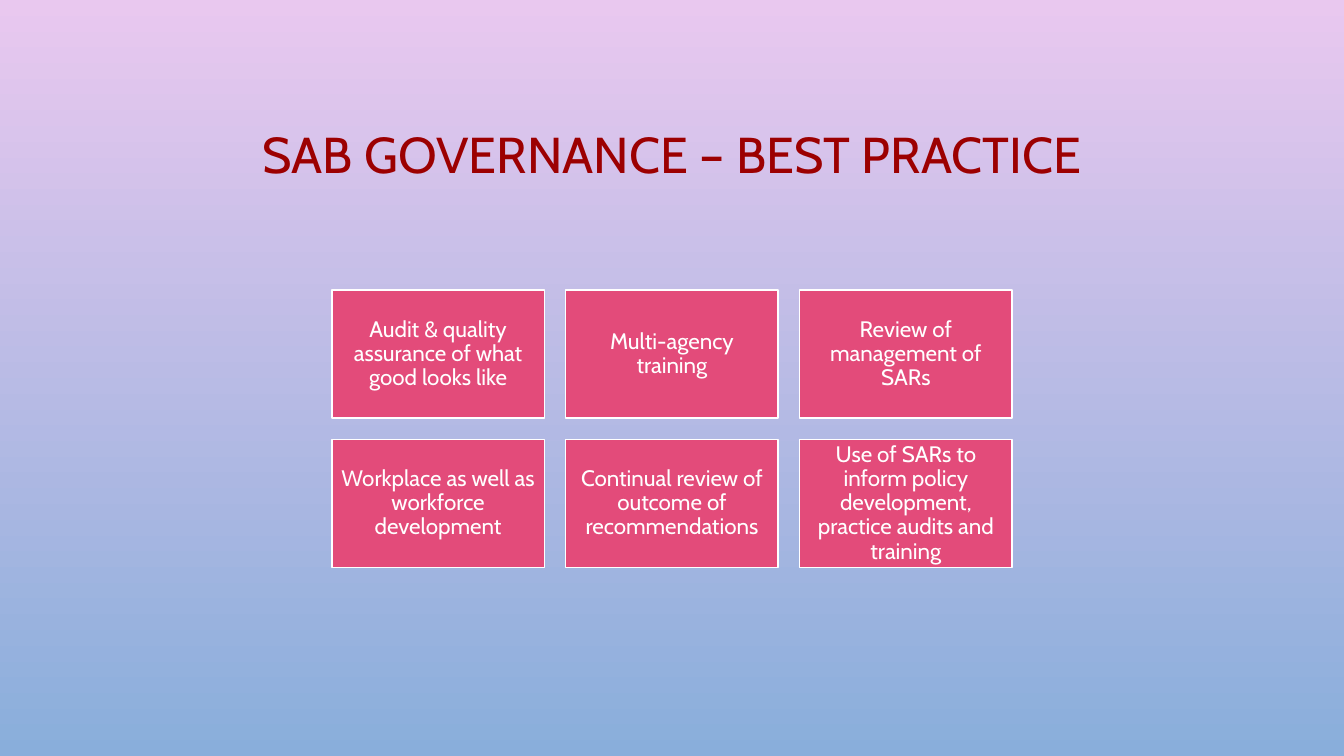
from pptx import Presentation
from pptx import util as u
from pptx.dml.color import RGBColor
from pptx.enum import shapes, text

COLOURS = {
    "sky_top": "E9C8EF",
    "sky_bottom": "89AEDB",
    "heading": "9C0001",
    "card": "E34B7A",
    "white": "FFFFFF",
}

PRACTICES = [
    "Audit & quality assurance of what good looks like",
    "Multi-agency training",
    "Review of management of SARs",
    "Workplace as well as workforce development",
    "Continual review of outcome of recommendations",
    "Use of SARs to inform policy development, practice audits and training",
]


class GovernanceSlide:
    font = "Cabin"
    columns = 3
    grid_left, grid_top = 3.29, 2.88
    card_width, card_height = 2.11, 1.27
    gap = 0.21

    def __init__(self, deck):
        self.slide = deck.slides.add_slide(deck.slide_layouts[5])

    def colour(self, name):
        return RGBColor.from_string(COLOURS[name])

    def background(self, top, bottom):
        fill = self.slide.background.fill
        fill.gradient()
        fill.gradient_angle = 270
        for stop, position, name in zip(fill.gradient_stops, (0, 1), (top, bottom)):
            stop.position = position
            stop.color.rgb = self.colour(name)

    def set_words(self, frame, words, size, colour, inset):
        frame.word_wrap = True
        frame.auto_size = text.MSO_AUTO_SIZE.NONE
        frame.vertical_anchor = text.MSO_ANCHOR.MIDDLE
        frame.margin_left = frame.margin_right = u.Inches(inset[0])
        frame.margin_top = frame.margin_bottom = u.Inches(inset[1])
        paragraph = frame.paragraphs[0]
        paragraph.alignment = text.PP_ALIGN.CENTER
        paragraph.line_spacing = 0.9
        run = paragraph.add_run()
        run.text = words
        run.font.name = self.font
        run.font.size = u.Pt(size)
        run.font.color.rgb = self.colour(colour)

    def title(self, words):
        heading = self.slide.shapes.title
        heading.left, heading.top = u.Inches(1), u.Inches(0.68)
        heading.width, heading.height = u.Inches(11.33), u.Inches(1.75)
        self.set_words(heading.text_frame, words, 36, "heading", (0.1, 0.05))

    def card(self, index, words):
        row, column = divmod(index, self.columns)
        card = self.slide.shapes.add_shape(
            shapes.MSO_SHAPE.RECTANGLE,
            u.Inches(self.grid_left + column * (self.card_width + self.gap)),
            u.Inches(self.grid_top + row * (self.card_height + self.gap)),
            u.Inches(self.card_width),
            u.Inches(self.card_height),
        )
        card.shadow.inherit = False
        card.fill.solid()
        card.fill.fore_color.rgb = self.colour("card")
        card.line.color.rgb = self.colour("white")
        card.line.width = u.Pt(1.25)
        self.set_words(card.text_frame, words, 16, "white", (0.07, 0.07))


def main():
    deck = Presentation()
    deck.slide_width, deck.slide_height = u.Inches(13.33), u.Inches(7.5)
    governance = GovernanceSlide(deck)

    # Background and heading
    governance.background("sky_top", "sky_bottom")
    governance.title("SAB GOVERNANCE – BEST PRACTICE")

    # Grid of practices
    for index, practice in enumerate(PRACTICES):
        governance.card(index, practice)

    deck.save("out.pptx")


if __name__ == "__main__":
    main()
